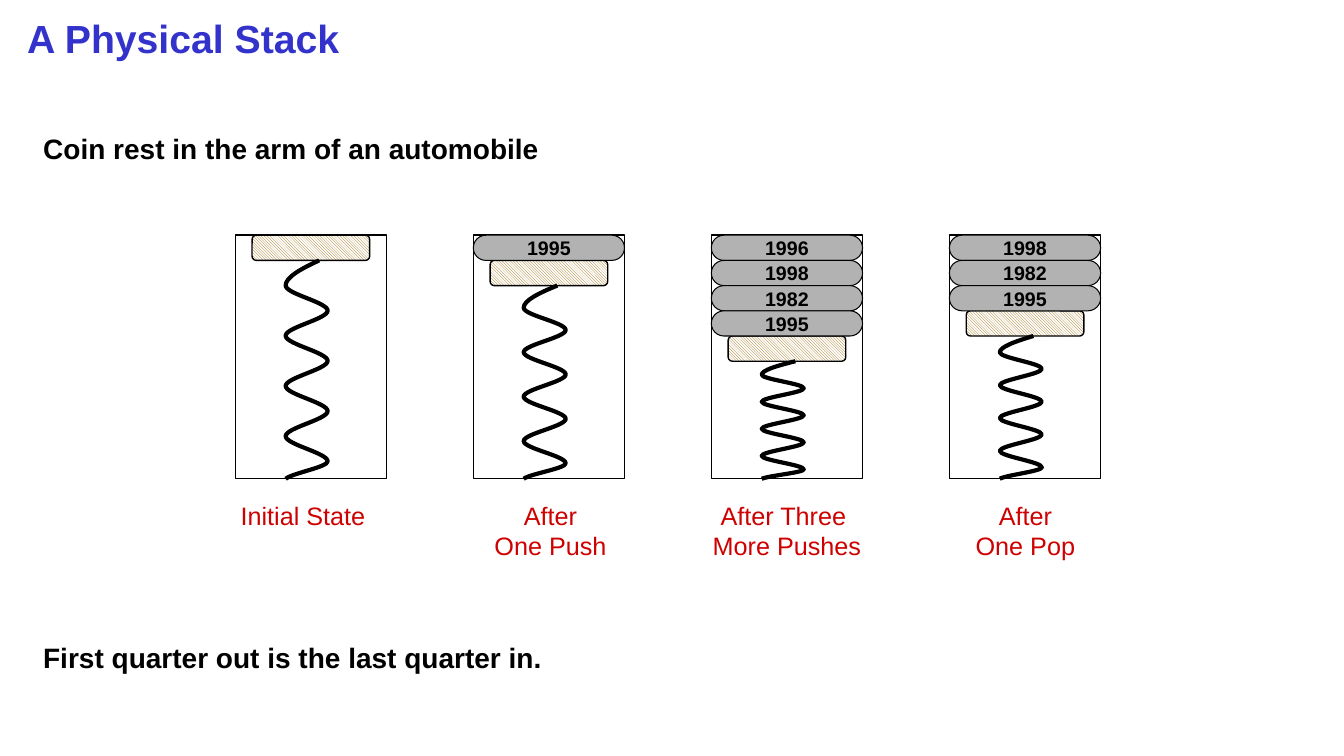
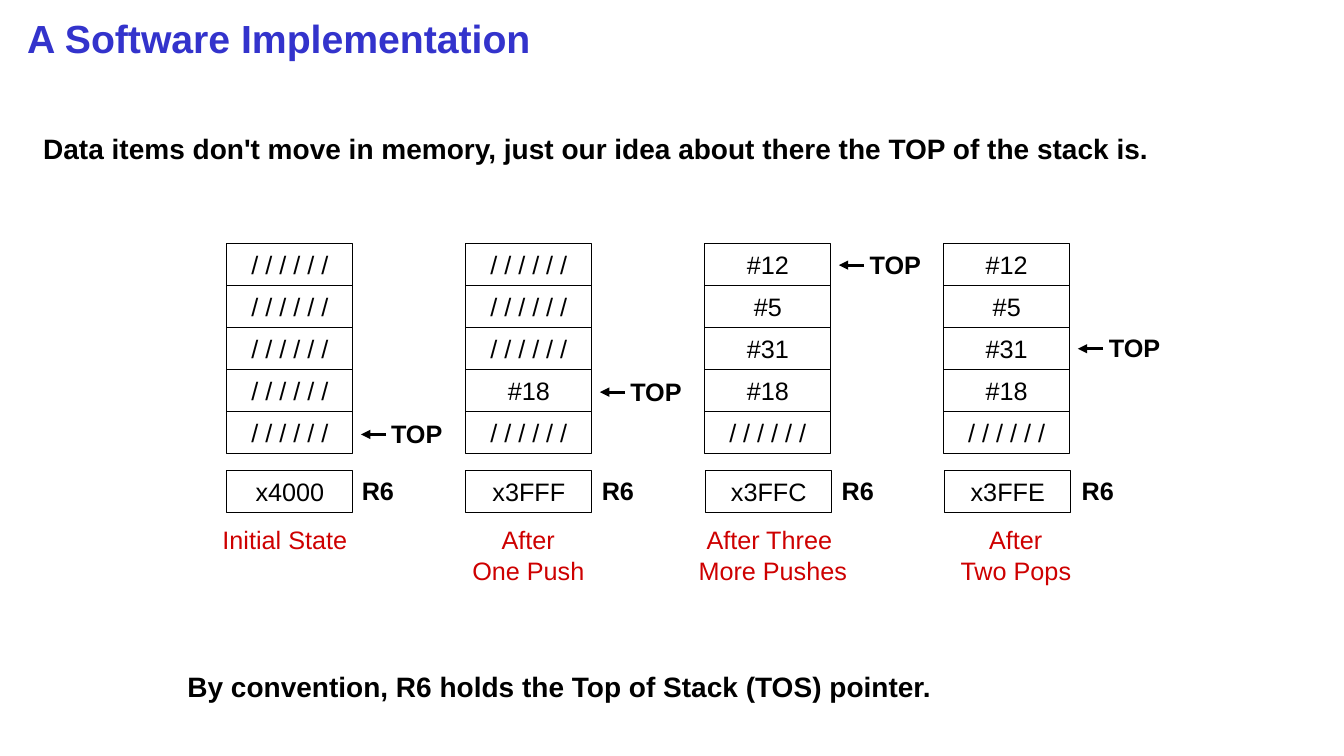
from lxml import etree
from pptx import Presentation
from pptx.dml.color import RGBColor
from pptx.enum.dml import MSO_PATTERN
from pptx.enum.shapes import MSO_CONNECTOR, MSO_SHAPE
from pptx.enum.text import MSO_ANCHOR, MSO_AUTO_SIZE, PP_ALIGN
from pptx.oxml.ns import qn
from pptx.util import Inches, Pt

BLUE = RGBColor(0x33, 0x33, 0xCC)
RED = RGBColor(0xCE, 0x00, 0x00)
BROWN = RGBColor(0x99, 0x66, 0x00)
GRAY = RGBColor(0xB2, 0xB2, 0xB2)
BLACK = RGBColor(0x00, 0x00, 0x00)
WHITE = RGBColor(0xFF, 0xFF, 0xFF)

RECTANGLE = MSO_SHAPE.RECTANGLE
ROUNDED = MSO_SHAPE.ROUNDED_RECTANGLE
HATCH = MSO_PATTERN.DARK_DOWNWARD_DIAGONAL
LEFT, CENTER = PP_ALIGN.LEFT, PP_ALIGN.CENTER
MIDDLE = MSO_ANCHOR.MIDDLE
NO_AUTOFIT = MSO_AUTO_SIZE.NONE
STRAIGHT = MSO_CONNECTOR.STRAIGHT

FONT = "Arial"
TITLE_AREA = (0.17, 0.09, 12.67, 0.58)


def write(box, text, size=18, color=BLACK, bold=False, align=LEFT, wrap=False):
    """Fill a shape with text, one paragraph for each line."""
    frame = box.text_frame
    frame.auto_size = NO_AUTOFIT
    frame.word_wrap = wrap
    frame.vertical_anchor = MIDDLE
    for number, line in enumerate(text.split("\n")):
        para = frame.add_paragraph() if number else frame.paragraphs[0]
        para.alignment = align
        span = para.add_run()
        span.text = line
        span.font.name = FONT
        span.font.size = Pt(size)
        span.font.bold = bold
        span.font.color.rgb = color


def add_block(page, kind, area, fill=None, line_width=0.75):
    block = page.shapes.add_shape(kind, *map(Inches, area))
    block.shadow.inherit = False
    if fill is None:
        block.fill.background()
    else:
        block.fill.solid()
        block.fill.fore_color.rgb = fill
    block.line.color.rgb = BLACK
    block.line.width = Pt(line_width)
    return block


deck = Presentation()
deck.slide_width = Inches(13.33)
deck.slide_height = Inches(7.5)

# Titles and statements (left, top, width, text) of both slides
outlines = [
    ("A Physical Stack",
     [(0.33, 1.25, 12, "Coin rest in the arm of an automobile"),
      (0.33, 6.3, 12, "First quarter out is the last quarter in.")]),
    ("A Software Implementation",
     [(0.33, 1.25, 12, "Data items don't move in memory, just our idea about "
                       "there the TOP of the stack is."),
      (1.76, 6.59, 7.64, "By convention, R6 holds the Top of Stack (TOS) pointer.")]),
]
pages = []
for title, statements in outlines:
    page = deck.slides.add_slide(deck.slide_layouts[5])
    pages.append(page)
    heading = page.shapes.title
    heading.left, heading.top, heading.width, heading.height = map(Inches, TITLE_AREA)
    write(heading, title, size=28, color=BLUE, bold=True, wrap=True)
    for left, top, width, text in statements:
        box = page.shapes.add_textbox(*map(Inches, (left, top, width, 0.44)))
        write(box, text, size=20, bold=True, wrap=True)
physical_page, software_page = pages

# Coin holders: coins from the top, a hatched plate, and a spring below it
HOLDER_WIDTH, HOLDER_HEIGHT, HOLDER_BOTTOM = 1.5, 29 / 12, 4.75
HOLDER_TOP = HOLDER_BOTTOM - HOLDER_HEIGHT
COIN_HEIGHT = 0.25
TURNS = 8
TURN_SHARE = 0.115
coin_stacks = [
    [],
    ["1995"],
    ["1996", "1998", "1982", "1995"],
    ["1998", "1982", "1995"],
]
for column, coins in enumerate(coin_stacks):
    left = 7 / 3 + column * 85 / 36
    add_block(physical_page, RECTANGLE,
              (left, HOLDER_TOP, HOLDER_WIDTH, HOLDER_HEIGHT), WHITE, 1)

    plate_top = HOLDER_TOP + len(coins) * COIN_HEIGHT
    plate = add_block(physical_page, ROUNDED,
                      (left + 1 / 6, plate_top, 7 / 6, COIN_HEIGHT), WHITE, 1)
    plate.fill.patterned()
    plate.fill.pattern = HATCH
    plate.fill.fore_color.rgb = BROWN
    plate.fill.back_color.rgb = WHITE

    # Each knot is x, y and the sideways reach of its curve handle
    spring_left, spring_top = left + 0.5, plate_top + COIN_HEIGHT
    spring_height = HOLDER_BOTTOM - spring_top
    knots = [(1 / 3, 0, -0.18)]
    for turn in range(1, TURNS + 1):
        side = 0 if turn % 2 else 5 / 12
        knots.append((side, turn * TURN_SHARE * spring_height, 0))
    knots.append((0, spring_height, -0.07))
    corners = [(Inches(spring_left + x), Inches(spring_top + y)) for x, y, _ in knots]
    builder = physical_page.shapes.build_freeform(*corners[0])
    builder.add_line_segments(corners[1:], close=False)
    spring = builder.convert_to_shape()
    spring.shadow.inherit = False
    spring.fill.background()
    spring.line.color.rgb = BLACK
    spring.line.width = Pt(3)

    # Bend each straight segment into a cubic curve
    segments = list(spring._element.iter(qn("a:lnTo")))
    for segment, (x1, y1, reach1), (x2, y2, reach2) in zip(segments, knots, knots[1:]):
        segment.tag = qn("a:cubicBezTo")
        handles = [(x1 + reach1, y1 + (y2 - y1) / 3),
                   (x2 - reach2, y2 - (y2 - y1) / 3)]
        for position, (x, y) in enumerate(handles):
            handle = etree.Element(qn("a:pt"), x=str(Inches(x)), y=str(Inches(y)))
            segment.insert(position, handle)

    for row, year in enumerate(coins):
        coin = add_block(physical_page, ROUNDED,
                         (left, HOLDER_TOP + row * COIN_HEIGHT,
                          HOLDER_WIDTH, COIN_HEIGHT), GRAY)
        coin.adjustments[0] = 0.5
        write(coin, year, size=14, bold=True, align=CENTER)

# Memory stacks: cells and top of the TOP label
CELL_WIDTH = 1.25
CELL_HEIGHT = 2.5 / 6
STACK_BOTTOM = 4.5
EMPTY = "/ / / / / /"
FULL = ["#12", "#5", "#31", "#18", EMPTY]
memory_stacks = [
    ([EMPTY] * 5, 4.1),
    ([EMPTY] * 3 + ["#18", EMPTY], 3.68),
    (FULL, 2.42),
    (FULL, 3.25),
]
for column, (values, pointer_top) in enumerate(memory_stacks):
    left = 2.25 + 2.37 * column
    stack_top = STACK_BOTTOM - len(values) * CELL_HEIGHT
    for row, value in enumerate(values):
        cell = add_block(software_page, RECTANGLE,
                         (left, stack_top + row * CELL_HEIGHT, CELL_WIDTH, CELL_HEIGHT))
        write(cell, value, align=CENTER)

    label = software_page.shapes.add_textbox(
        *map(Inches, (3.78 + 7.12 * column / 3, pointer_top, 0.72, 0.4)))
    write(label, "TOP", bold=True)

    arrow_y = pointer_top + 0.21
    arrow = software_page.shapes.add_connector(
        STRAIGHT, *map(Inches, (left + 1.58, arrow_y, left + 1.33, arrow_y)))
    arrow.line.color.rgb = BLACK
    arrow.line.width = Pt(2.25)
    etree.SubElement(arrow.line._get_or_add_ln(), qn("a:tailEnd"), type="triangle")
    etree.SubElement(arrow._element.spPr, qn("a:effectLst"))

# Captions: left, width and text
caption_rows = [
    (physical_page, 4.91,
     [(2.28, 1.45, "Initial State"), (4.8, 1.32, "After\nOne Push"),
      (6.96, 1.69, "After Three \nMore Pushes"), (9.57, 1.2, "After\nOne Pop")]),
    (software_page, 5.15,
     [(2.1, 1.45, "Initial State"), (4.58, 1.32, "After\nOne Push"),
      (6.82, 1.69, "After Three \nMore Pushes"), (9.42, 1.31, "After\nTwo Pops")]),
]
for page, top, captions in caption_rows:
    for left, width, text in captions:
        height = 0.71 if "\n" in text else 0.4
        box = page.shapes.add_textbox(*map(Inches, (left, top, width, height)))
        write(box, text, color=RED, align=CENTER)

# Register R6 under each memory stack
REGISTER_TOP = 4.67
registers = [(2.25, "x4000"), (4.62, "x3FFF"), (7, "x3FFC"), (9.37, "x3FFE")]
for column, (left, value) in enumerate(registers):
    register = add_block(software_page, RECTANGLE,
                         (left, REGISTER_TOP, CELL_WIDTH, CELL_HEIGHT))
    write(register, value, align=CENTER)
    label = software_page.shapes.add_textbox(
        *map(Inches, (3.49 + 2.38 * column, REGISTER_TOP, 0.52, 0.4)))
    write(label, "R6", bold=True)

deck.save("out.pptx")
